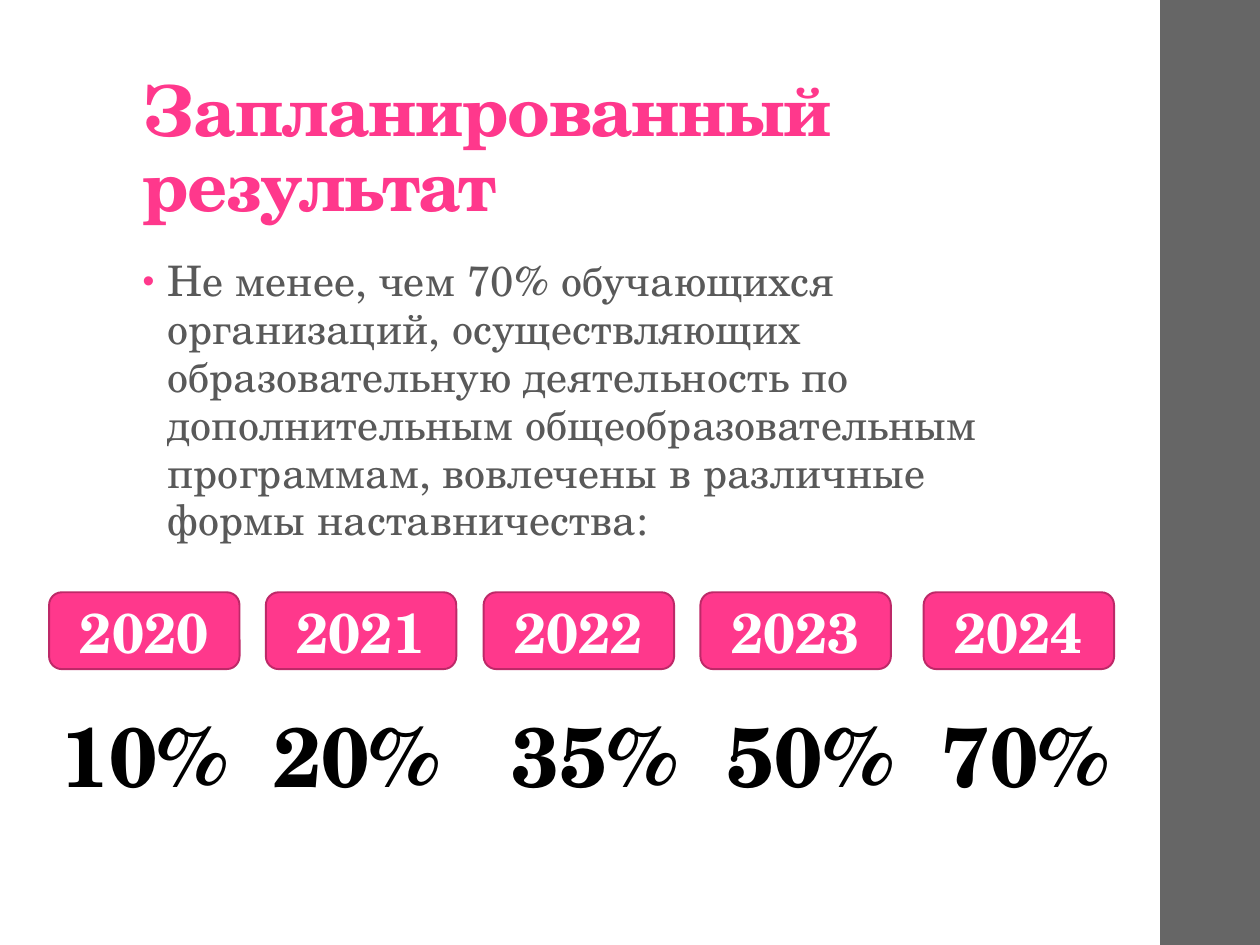
"""Build the slide with the planned mentoring coverage for 2020 to 2024."""
from dataclasses import dataclass

from lxml import etree
from pptx import Presentation
from pptx import util as u
from pptx.dml.color import RGBColor
from pptx.enum import shapes, text
from pptx.oxml import ns

PINK = RGBColor(0xFF, 0x38, 0x8C)
DARK_PINK = RGBColor(0xBD, 0x29, 0x68)
BAND_GRAY = RGBColor(0x66, 0x66, 0x66)
TEXT_GRAY = RGBColor(0x59, 0x59, 0x59)
WHITE = RGBColor(0xFF, 0xFF, 0xFF)
BLACK = RGBColor(0, 0, 0)
FONT = "TeX Gyre Schola"

TITLE = "Запланированный результат"
GOAL = (
    "Не менее, чем 70% обучающихся организаций, осуществляющих "
    "образовательную деятельность по дополнительным общеобразовательным "
    "программам, вовлечены в различные формы наставничества:"
)


@dataclass(frozen=True)
class Target:
    year: str
    share: str
    left: float
    tab: float


TARGETS = [
    Target("2020", "10%", 0.99, 0),
    Target("2021", "20%", 5.36, 4.27),
    Target("2022", "35%", 9.75, 9.07),
    Target("2023", "50%", 14.12, 13.41),
    Target("2024", "70%", 18.62, 17.75),
]


def place(box, left: float, top: float, width: float, height: float) -> None:
    """Move and size a box, in centimetres."""
    box.left, box.top = u.Cm(left), u.Cm(top)
    box.width, box.height = u.Cm(width), u.Cm(height)


def add_child(parent, tag: str, **attributes: str):
    """Append a DrawingML element."""
    return etree.SubElement(parent, ns.qn(tag), attributes)


def style(para, size: float, color: RGBColor, bold: bool, spacing: float = 0) -> None:
    """Set the font of a whole paragraph."""
    font = para.font
    font.name, font.size, font.bold = FONT, u.Pt(size), bold
    font.color.rgb = color
    if spacing:
        para._p.pPr.find(ns.qn("a:defRPr")).set("spc", str(round(spacing * 100)))


def add_block(page, kind, left: float, top: float, width: float, height: float, fill: RGBColor):
    """Add a flat filled shape without outline."""
    block = page.shapes.add_shape(kind, u.Cm(left), u.Cm(top), u.Cm(width), u.Cm(height))
    block.shadow.inherit = False
    block.fill.solid()
    block.fill.fore_color.rgb = fill
    block.line.fill.background()
    return block


def fill_title(box) -> None:
    """Write the slide title."""
    place(box, 2.62, 1.02, 20.19, 3.68)
    frame = box.text_frame
    frame.text = TITLE
    frame.auto_size = text.MSO_AUTO_SIZE.NONE
    frame.vertical_anchor = text.MSO_ANCHOR.BOTTOM
    para = frame.paragraphs[0]
    para.alignment = text.PP_ALIGN.LEFT
    para.line_spacing = 0.9
    style(para, 40, PINK, True, -0.7)


def fill_goal(box) -> None:
    """Write the bulleted goal."""
    place(box, 2.62, 5.08, 17.91, 4.34)
    frame = box.text_frame
    frame.text = GOAL
    frame.auto_size = text.MSO_AUTO_SIZE.NONE
    para = frame.paragraphs[0]
    para.line_spacing = 0.95
    para.space_before, para.space_after = u.Pt(14), u.Pt(2)
    props = para._p.get_or_add_pPr()
    indent = u.Cm(0.5)
    props.set("marL", str(indent))
    props.set("indent", str(-indent))
    add_child(add_child(props, "a:buClr"), "a:srgbClr", val=str(PINK))
    add_child(props, "a:buSzPct", val="80000")
    add_child(props, "a:buChar", char="•")
    style(para, 24, TEXT_GRAY, False, 0.1)


def add_year(page, target: Target) -> None:
    """Add the rounded box of one year."""
    box = add_block(page, shapes.MSO_SHAPE.ROUNDED_RECTANGLE, target.left, 11.94, 3.84, 1.55, PINK)
    box.line.color.rgb = DARK_PINK
    box.line.width = u.Pt(1.1)
    frame = box.text_frame
    frame.text = target.year
    frame.vertical_anchor = text.MSO_ANCHOR.MIDDLE
    para = frame.paragraphs[0]
    para.alignment = text.PP_ALIGN.CENTER
    style(para, 32, WHITE, True)


def add_shares(page, targets: list[Target]) -> None:
    """Add the row of percentages, set on tab stops."""
    box = page.shapes.add_textbox(u.Cm(0.99), u.Cm(14.05), u.Cm(21.89), u.Cm(2.31))
    frame = box.text_frame
    frame.word_wrap = True
    frame.text = "\t".join(target.share for target in targets)
    para = frame.paragraphs[0]
    tabs = add_child(para._p.get_or_add_pPr(), "a:tabLst")
    for target in targets[1:]:
        add_child(tabs, "a:tab", pos=str(u.Cm(target.tab)), algn="l")
    style(para, 48, BLACK, True)


def main() -> None:
    """Build and save the deck."""
    deck = Presentation()
    deck.slide_width, deck.slide_height = u.Cm(25.4), u.Cm(19.05)
    page = deck.slides.add_slide(deck.slide_layouts[1])
    add_block(page, shapes.MSO_SHAPE.RECTANGLE, 23.39, 0, 2.01, 19.05, BAND_GRAY)
    fill_title(page.shapes.title)
    fill_goal(page.placeholders[1])
    for target in TARGETS:
        add_year(page, target)
    add_shares(page, TARGETS)
    deck.save("out.pptx")


if __name__ == "__main__":
    main()
